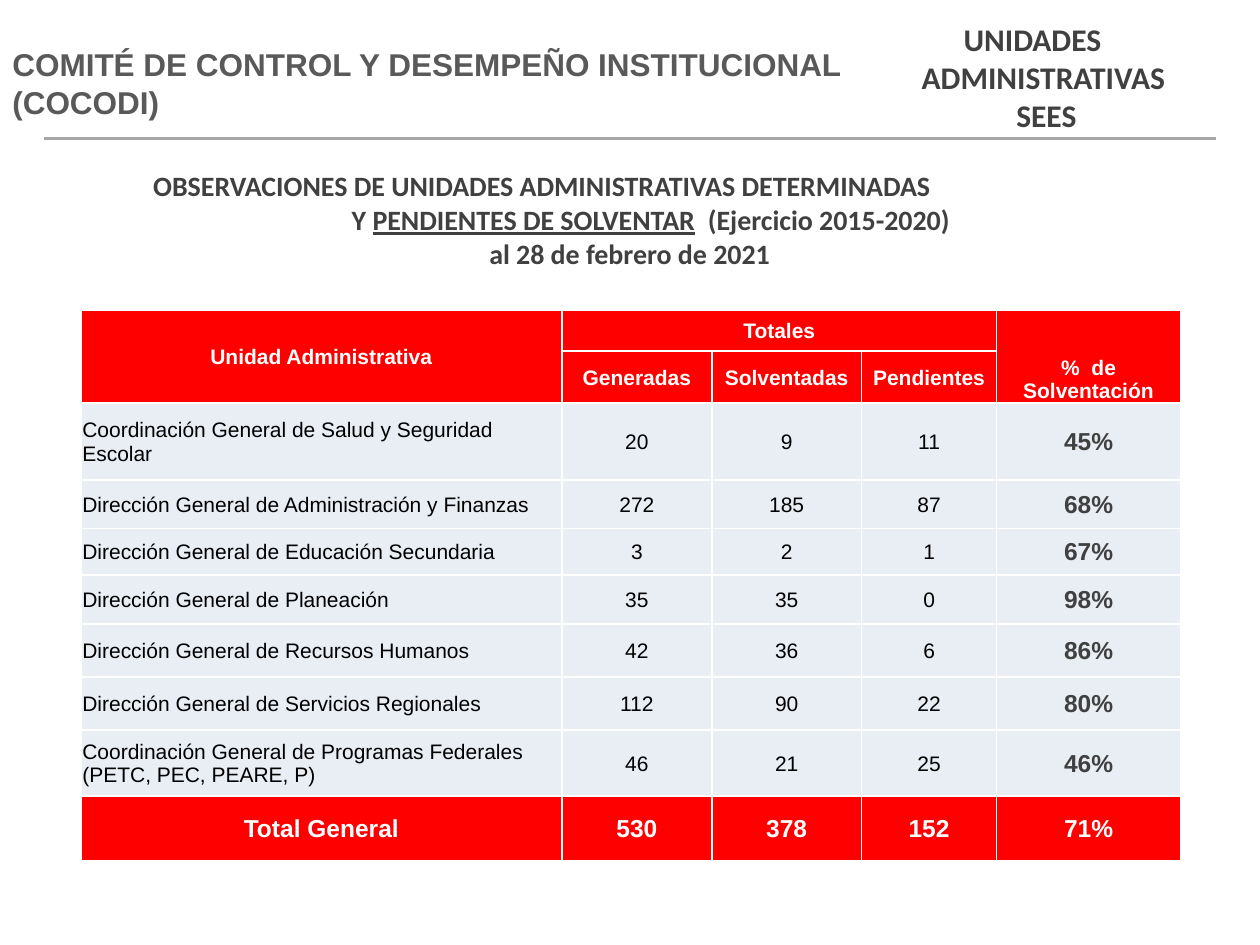
from lxml.etree import SubElement
from pptx import Presentation
from pptx.dml.color import RGBColor
from pptx.enum.shapes import MSO_CONNECTOR as Connector, MSO_SHAPE as Shape
from pptx.enum.text import MSO_ANCHOR as Anchor, PP_ALIGN as Align
from pptx.oxml.ns import qn
from pptx.util import Cm, Pt

WHITE = RGBColor(0xFF, 0xFF, 0xFF)
BLACK = RGBColor(0, 0, 0)
RED = RGBColor(0xFF, 0, 0)
PALE = RGBColor(0xE9, 0xED, 0xF4)
DARK = RGBColor(0x40, 0x40, 0x40)
GREY = RGBColor(0x59, 0x59, 0x59)
RULE = RGBColor(0xA6, 0xA6, 0xA6)

COLUMN_WIDTHS = [9.7, 3.02, 3.02, 2.72, 3.71]
ROW_HEIGHTS = [0.83, 1.04, 1.55, 0.98, 0.93, 0.99, 1.07, 1.07, 1.33, 1.3]
UNITS = [
    ("Coordinación General de Salud y Seguridad Escolar", 20, 9, 11, "45%"),
    ("Dirección General de Administración y Finanzas", 272, 185, 87, "68%"),
    ("Dirección General de Educación Secundaria", 3, 2, 1, "67%"),
    ("Dirección General de Planeación", 35, 35, 0, "98%"),
    ("Dirección General de Recursos Humanos", 42, 36, 6, "86%"),
    ("Dirección General de Servicios Regionales", 112, 90, 22, "80%"),
    ("Coordinación General de Programas Federales (PETC, PEC, PEARE, P)", 46, 21, 25, "46%"),
]
TOTAL = ("Total General", 530, 378, 152, "71%")


def add_span(para, text, font="Arial", size=12, color=BLACK, bold=True, underline=False):
    span = para.add_run()
    span.text = str(text)
    span.font.name = font
    span.font.size = Pt(size)
    span.font.color.rgb = color
    span.font.bold = bold
    span.font.underline = underline


def add_para(frame, align=Align.CENTER, left=0, right=0):
    para = frame.paragraphs[0]
    if para.runs:
        para = frame.add_paragraph()
    para.alignment = align
    properties = para._p.get_or_add_pPr()
    properties.set("marL", str(Cm(left)))
    properties.set("marR", str(Cm(right)))
    return para


def add_box(page, left, top, width, height):
    box = page.shapes.add_textbox(Cm(left), Cm(top), Cm(width), Cm(height))
    box.text_frame.word_wrap = True
    return box.text_frame


def add_title(page):
    style = dict(font="Calibri", size=16, color=DARK)
    frame = add_box(page, 2.84, 3.28, 19.71, 2.31)
    add_span(add_para(frame, align=Align.LEFT),
             "OBSERVACIONES DE UNIDADES ADMINISTRATIVAS DETERMINADAS", **style)
    para = add_para(frame, left=0.85)
    add_span(para, "Y ", **style)
    add_span(para, "PENDIENTES DE SOLVENTAR", underline=True, **style)
    add_span(para, "  (Ejercicio 2015-2020)", **style)
    add_span(add_para(frame), "al 28 de febrero de 2021", **style)


def add_area_name(page):
    frame = add_box(page, 16.79, 0.28, 8.61, 2.57)
    for text, right in [("UNIDADES", 0.56), ("ADMINISTRATIVAS", 0.12), ("SEES", 0)]:
        add_span(add_para(frame, right=right), text, font="Calibri", size=18, color=DARK)


def add_committee_banner(page):
    banner = page.shapes.add_shape(Shape.RECTANGLE, 0, 0, Cm(18.01), Cm(3.33))
    banner.shadow.inherit = False
    banner.fill.solid()
    banner.fill.fore_color.rgb = WHITE
    banner.line.fill.background()
    frame = banner.text_frame
    frame.word_wrap = True
    frame.vertical_anchor = Anchor.MIDDLE
    add_span(add_para(frame, align=Align.LEFT),
             "COMITÉ DE CONTROL Y DESEMPEÑO INSTITUCIONAL (COCODI)", size=18, color=GREY)


def add_rule(page):
    rule = page.shapes.add_connector(Connector.STRAIGHT, Cm(0.89), Cm(2.79), Cm(24.51), Cm(2.79))
    rule.line.color.rgb = RULE
    rule.line.width = Pt(1.5)
    SubElement(rule._element.spPr, qn("a:effectLst"))


def set_borders(cell):
    properties = cell._tc.get_or_add_tcPr()
    for position, side in enumerate(("lnL", "lnR", "lnT", "lnB")):
        border = properties.makeelement(qn(f"a:{side}"), {"w": str(Pt(1))})
        properties.insert(position, border)
        SubElement(SubElement(border, qn("a:solidFill")), qn("a:srgbClr"), val=str(WHITE))


def fill_cell(cell, text, fill=RED, align=Align.CENTER, anchor=Anchor.MIDDLE, **style):
    cell.fill.solid()
    cell.fill.fore_color.rgb = fill
    cell.vertical_anchor = anchor
    cell.margin_left = cell.margin_right = cell.margin_top = Cm(0.03)
    cell.margin_bottom = 0
    set_borders(cell)
    add_span(add_para(cell.text_frame, align=align), text, **style)


def add_headings(table):
    for column, text in enumerate(("Unidad Administrativa", "Totales", "", "", "%  de Solventación")):
        anchor = Anchor.BOTTOM if column == 4 else Anchor.MIDDLE
        fill_cell(table.cell(0, column), text, anchor=anchor, color=WHITE)
    for column, text in enumerate(("", "Generadas", "Solventadas", "Pendientes", "")):
        fill_cell(table.cell(1, column), text, color=WHITE)
    for first, last in [((0, 0), (1, 0)), ((0, 1), (0, 3)), ((0, 4), (1, 4))]:
        table.cell(*first).merge(table.cell(*last))


def add_observations_table(page):
    table = page.shapes.add_table(len(ROW_HEIGHTS), len(COLUMN_WIDTHS), Cm(1.63), Cm(6.25),
                                  Cm(sum(COLUMN_WIDTHS)), Cm(sum(ROW_HEIGHTS))).table
    for column, width in zip(table.columns, COLUMN_WIDTHS):
        column.width = Cm(width)
    for row, height in zip(table.rows, ROW_HEIGHTS):
        row.height = Cm(height)
    add_headings(table)
    for row, (name, *counts, percent) in enumerate(UNITS, start=2):
        fill_cell(table.cell(row, 0), name, fill=PALE, align=Align.LEFT, bold=False)
        for column, count in enumerate(counts, start=1):
            fill_cell(table.cell(row, column), count, fill=PALE, bold=False)
        fill_cell(table.cell(row, 4), percent, fill=PALE, size=14, color=DARK)
    for column, value in enumerate(TOTAL):
        fill_cell(table.cell(len(ROW_HEIGHTS) - 1, column), value, size=14, color=WHITE)


def main():
    deck = Presentation()
    deck.slide_width, deck.slide_height = Cm(25.4), Cm(19.05)
    page = deck.slides.add_slide(deck.slide_layouts[6])
    add_title(page)
    add_area_name(page)
    add_observations_table(page)
    add_committee_banner(page)
    add_rule(page)
    deck.save("out.pptx")


if __name__ == "__main__":
    main()
